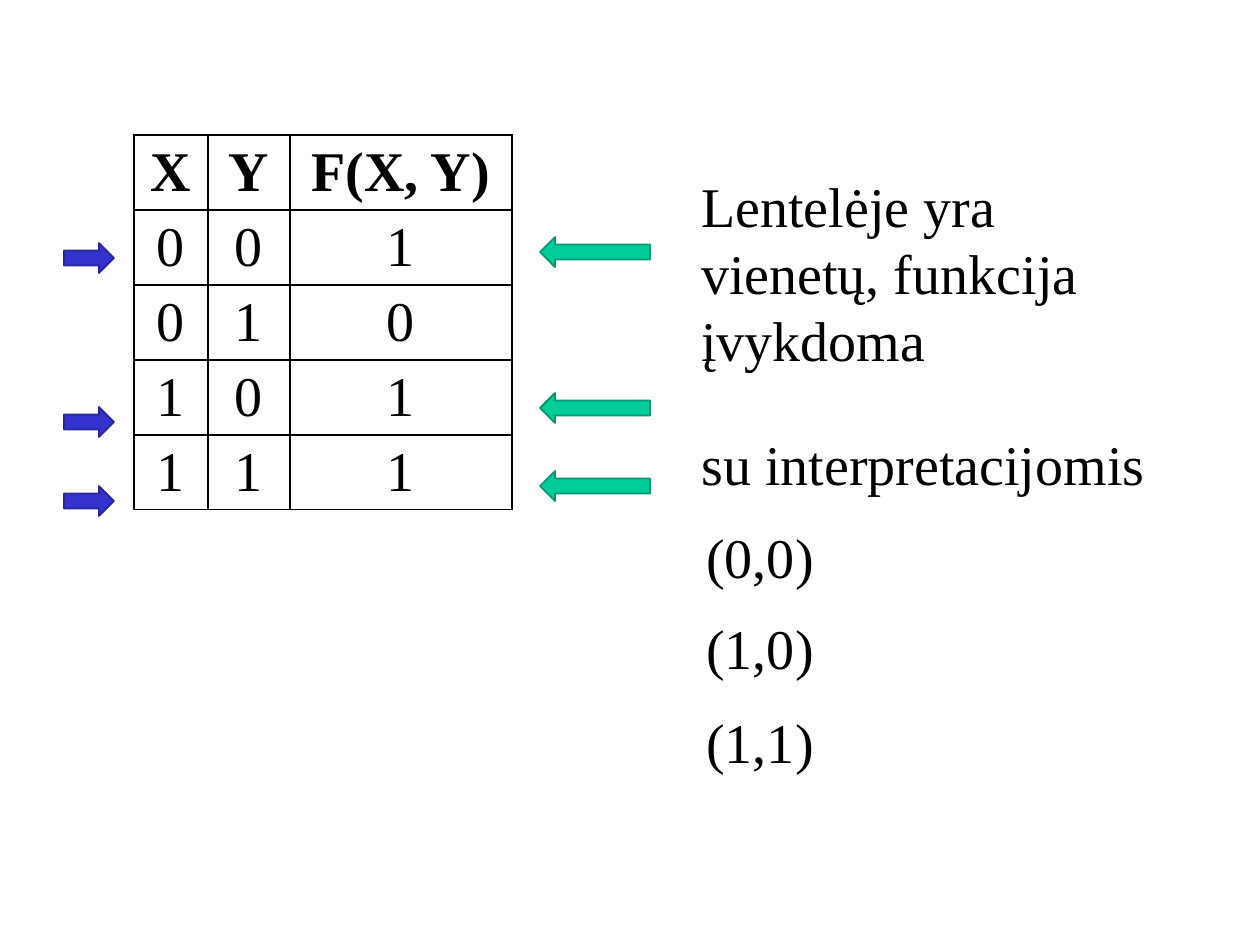
from pptx import Presentation
from pptx.dml.color import RGBColor
from pptx.enum.shapes import MSO_SHAPE as Shape
from pptx.enum.text import MSO_ANCHOR as Anchor, MSO_AUTO_SIZE as AutoSize, PP_ALIGN as Align
from pptx.oxml import parse_xml
from pptx.oxml.ns import nsdecls
from pptx.util import Emu, Pt

PX = 914400 / 126


def px(length):
    return Emu(round(length * PX))


def color(value):
    return RGBColor.from_string(value)


class SlideBuilder:
    font = "Times New Roman"
    size = 32
    ink = "000000"

    def __init__(self, slide):
        self.slide = slide

    def add_run(self, paragraph, text, bold=False):
        run = paragraph.add_run()
        run.text = text
        run.font.name = self.font
        run.font.size = Pt(self.size)
        run.font.bold = bold
        run.font.color.rgb = color(self.ink)

    def text(self, left, top, width, height, text):
        box = self.slide.shapes.add_textbox(px(left), px(top), px(width), px(height))
        frame = box.text_frame
        frame.word_wrap = True
        frame.auto_size = AutoSize.SHAPE_TO_FIT_TEXT
        self.add_run(frame.paragraphs[0], text)

    def arrow(self, kind, left, top, width, height, fill, line):
        shape = self.slide.shapes.add_shape(kind, px(left), px(top), px(width), px(height))
        shape.shadow.inherit = False
        shape.fill.solid()
        shape.fill.fore_color.rgb = color(fill)
        shape.line.color.rgb = color(line)
        shape.line.width = Pt(1)

    def border(self, cell):
        properties = cell._tc.get_or_add_tcPr()
        for index, side in enumerate(("lnL", "lnR", "lnT", "lnB")):
            properties.insert(index, parse_xml(
                f'<a:{side} {nsdecls("a")} w="12700"><a:solidFill>'
                f'<a:srgbClr val="{self.ink}"/></a:solidFill></a:{side}>'))

    def table(self, left, top, widths, row_height, rows):
        frame = self.slide.shapes.add_table(
            len(rows), len(widths), px(left), px(top),
            px(sum(widths)), px(row_height * len(rows)))
        table = frame.table
        for column, width in zip(table.columns, widths):
            column.width = px(width)
        for row_index, values in enumerate(rows):
            table.rows[row_index].height = px(row_height)
            for column_index, value in enumerate(values):
                cell = table.cell(row_index, column_index)
                cell.fill.background()
                cell.margin_left = cell.margin_right = px(8)
                cell.margin_top = cell.margin_bottom = px(3)
                cell.vertical_anchor = Anchor.MIDDLE
                paragraph = cell.text_frame.paragraphs[0]
                paragraph.alignment = Align.CENTER
                self.add_run(paragraph, value, bold=row_index == 0)
                self.border(cell)


def main():
    presentation = Presentation()
    presentation.slide_width = px(1260)
    presentation.slide_height = px(945)
    builder = SlideBuilder(presentation.slides.add_slide(presentation.slide_layouts[6]))

    # Truth table
    builder.table(134, 135, (74, 82, 222), 75, (
        ("X", "Y", "F(X, Y)"),
        ("0", "0", "1"),
        ("0", "1", "0"),
        ("1", "0", "1"),
        ("1", "1", "1"),
    ))

    # Arrows at the rows where the function is 1
    for top in (237, 393, 471):
        builder.arrow(Shape.LEFT_ARROW, 540, top, 110, 30, "00CC99", "009771")
    for top in (243, 407, 486):
        builder.arrow(Shape.RIGHT_ARROW, 64, top, 50, 30, "3333CC", "262697")

    # Conclusion
    builder.text(689, 165, 417, 217, "Lentelėje yra vienetų, funkcija įvykdoma")
    builder.text(689, 423, 535, 81, "su interpretacijomis")

    # Satisfying interpretations
    for top, pair in ((516, "(0,0)"), (607, "(1,0)"), (701, "(1,1)")):
        builder.text(694, top, 417, 81, pair)

    presentation.save("out.pptx")


if __name__ == "__main__":
    main()
